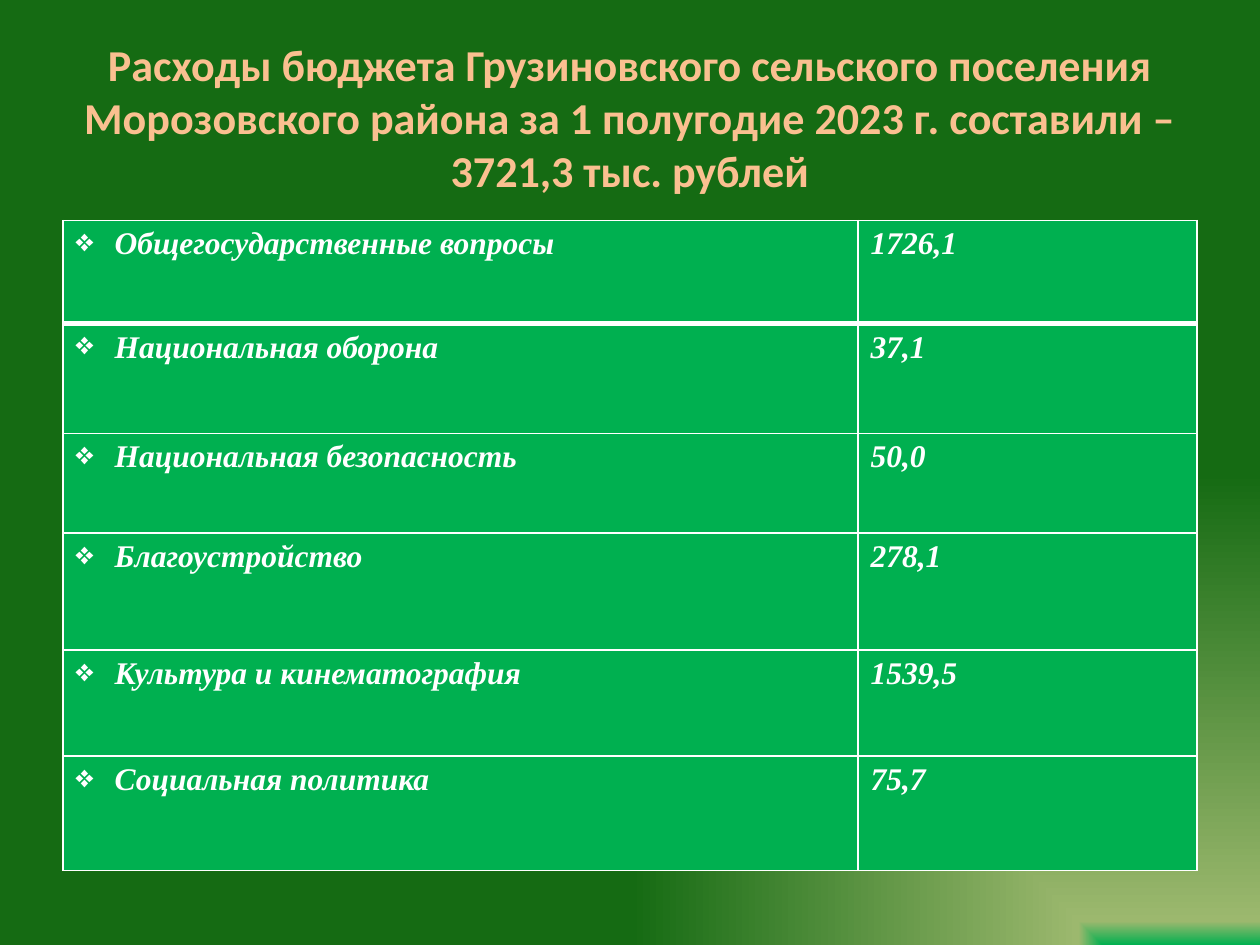
import pptx
import pptx.util
from lxml import etree
from pptx.dml.color import RGBColor
from pptx.enum.text import MSO_ANCHOR, PP_ALIGN
from pptx.oxml import parse_xml
from pptx.oxml.ns import nsdecls, qn
from pptx.util import Inches


class Theme:
    title_color = "FAC090"
    text_color = "FFFFFF"
    cell_color = "00B050"
    gradient = [(0, "00B050"), (5, "9CB86E"), (100, "156B13")]
    title_font, title_size = "Calibri", 25.2
    table_font, table_size = "Times New Roman", 18
    border, header_border = 1, 3


def style_font(p, name, size, color, italic=False):
    p.font.name = name
    p.font.size = pptx.util.Pt(size)
    p.font.color.rgb = RGBColor.from_string(color)
    p.font.bold = True
    p.font.italic = italic


def set_borders(cell, widths):
    """Draw the cell's edges; widths are points by edge name (L, R, T, B)."""
    tc_pr = cell._tc.get_or_add_tcPr()
    for i, (edge, width) in enumerate(widths.items()):
        tc_pr.insert(i, parse_xml(
            f'<a:ln{edge} {nsdecls("a")} w="{pptx.util.Pt(width)}"><a:solidFill>'
            f'<a:srgbClr val="{Theme.text_color}"/></a:solidFill></a:ln{edge}>'))


prs = pptx.Presentation()
prs.slide_width, prs.slide_height = Inches(10), Inches(7.5)
s = prs.slides.add_slide(prs.slide_layouts[6])

# Background: gradient spreading from the bottom right corner
stops = "".join(f'<a:gs pos="{pos * 1000}"><a:srgbClr val="{color}"/></a:gs>'
                for pos, color in Theme.gradient)
s.element.cSld.insert(0, parse_xml(
    f'<p:bg {nsdecls("p", "a")}><p:bgPr><a:gradFill rotWithShape="1">'
    f'<a:gsLst>{stops}</a:gsLst><a:path path="rect">'
    '<a:fillToRect l="100000" t="100000"/></a:path></a:gradFill>'
    '<a:effectLst/></p:bgPr></p:bg>'))

# Title
tf = s.shapes.add_textbox(Inches(0.5), Inches(0.3), Inches(9), Inches(1.25)).text_frame
tf.word_wrap = True
tf.vertical_anchor = MSO_ANCHOR.MIDDLE
p = tf.paragraphs[0]
p.text = ("Расходы бюджета Грузиновского сельского поселения "
          "Морозовского района за 1 полугодие 2023 г. составили – 3721,3 тыс. рублей")
p.alignment = PP_ALIGN.CENTER
style_font(p, Theme.title_font, Theme.title_size, Theme.title_color)

# Expenses: item, amount, row height
expenses = [
    ("Общегосударственные вопросы", "1726,1", 0.82),
    ("Национальная оборона", "37,1", 0.87),
    ("Национальная безопасность", "50,0", 0.79),
    ("Благоустройство", "278,1", 0.93),
    ("Культура и кинематография", "1539,5", 0.84),
    ("Социальная политика", "75,7", 0.91),
]
table = s.shapes.add_table(len(expenses), 2, Inches(0.5), Inches(1.75),
                           Inches(9), Inches(5.16)).table
for column, width in zip(table.columns, (6.31, 2.69)):
    column.width = Inches(width)

for row, (item, amount, height) in enumerate(expenses):
    table.rows[row].height = Inches(height)
    for col, text in enumerate((item, amount)):
        cell = table.cell(row, col)
        cell.fill.solid()
        cell.fill.fore_color.rgb = RGBColor.from_string(Theme.cell_color)
        set_borders(cell, {
            "L": Theme.border,
            "R": Theme.border,
            "T": Theme.header_border if row == 1 else Theme.border,
            "B": Theme.header_border if row == 0 else Theme.border,
        })
        p = cell.text_frame.paragraphs[0]
        p.text = text
        style_font(p, Theme.table_font, Theme.table_size, Theme.text_color, italic=True)
        if col == 0:
            p_pr = p._p.get_or_add_pPr()
            p_pr.set("marL", str(Inches(0.31)))
            p_pr.set("indent", str(-Inches(0.31)))
            bullet = etree.Element(qn("a:buChar"), char="❖")
            p_pr.insert(0, bullet)

prs.save("out.pptx")
